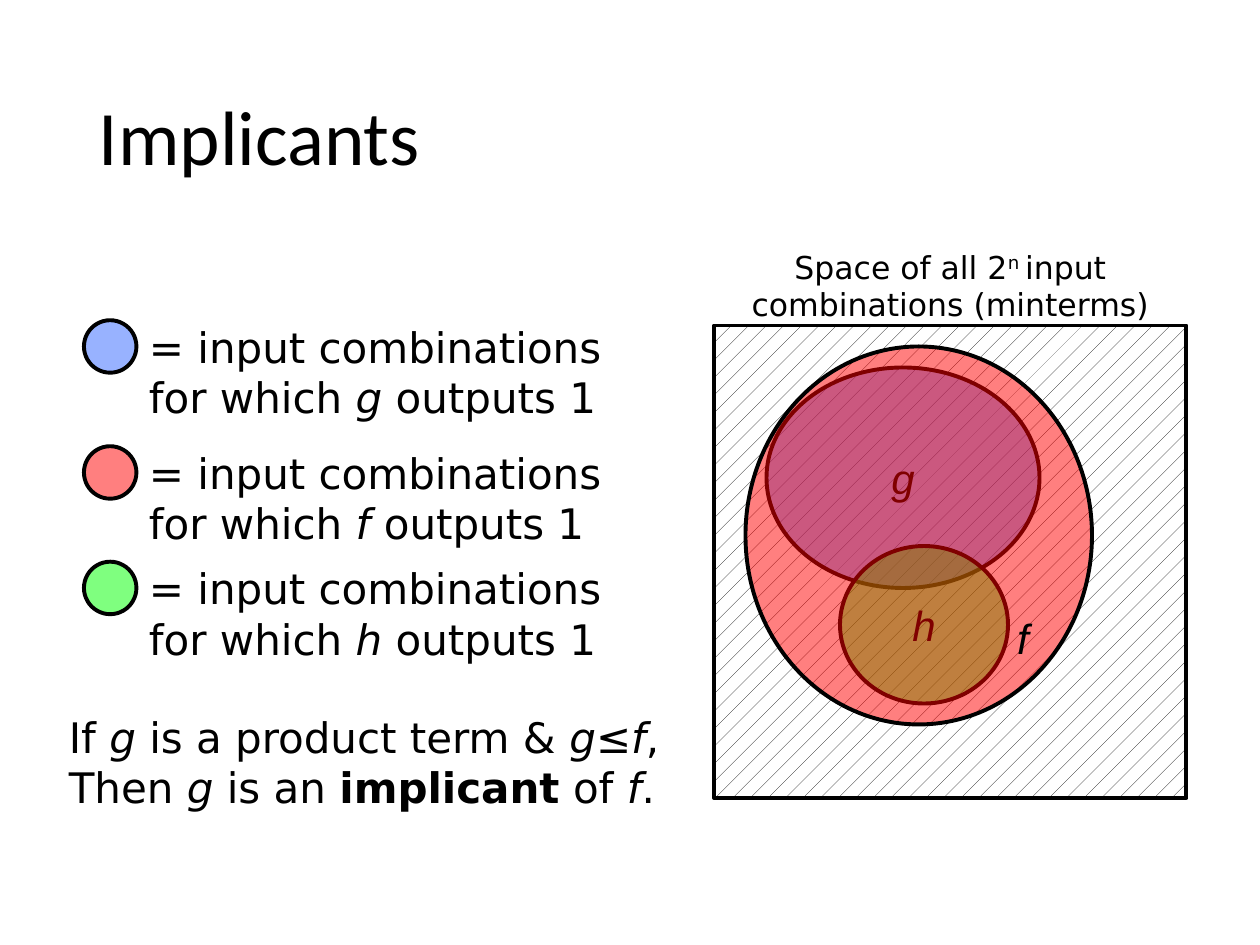
from lxml.etree import SubElement
from pptx import Presentation
from pptx.dml.color import RGBColor
from pptx.enum.dml import MSO_PATTERN as Pattern
from pptx.enum.shapes import MSO_SHAPE as Shape
from pptx.enum.text import MSO_ANCHOR as Anchor, MSO_AUTO_SIZE as Fit, PP_ALIGN as Align
from pptx.oxml.ns import qn
from pptx.util import Pt

PX = 9525  # EMU per px, 96 px to the inch
BLACK, WHITE = "000000", "FFFFFF"
BLUE, RED, GREEN = "3366FF", "FF0000", "00FF00"
SANS = "DejaVu Sans"


def write(frame, lines, size, font, align=Align.LEFT, anchor=Anchor.TOP, wrap=False):
    """Fill a frame; *x* is italic, and a piece led by ! is bold, by ^ raised."""
    frame.word_wrap, frame.vertical_anchor = wrap, anchor
    for i, line in enumerate(lines):
        para = frame.add_paragraph() if i else frame.paragraphs[0]
        para.alignment = align
        for j, piece in enumerate(line.split("*")):
            if not piece:
                continue
            run = para.add_run()
            run.text = piece.lstrip("!^")
            run.font.name, run.font.size = font, Pt(size)
            run.font.color.rgb = RGBColor.from_string(BLACK)
            run.font.bold = piece[0] == "!"
            run.font.italic = j % 2 == 1 and piece[0] not in "!^"
            if piece[0] == "^":
                run.font._element.set("baseline", "30000")


def draw(shapes, kind, box, color=None):
    """Add a black-lined shape, half clear in color or hatched without one."""
    shape = shapes.add_shape(kind, *[n * PX for n in box])
    shape.shadow.inherit = False
    shape.line.color.rgb = RGBColor.from_string(BLACK)
    shape.line.width = Pt(2.25)
    fill = shape.fill
    if color:
        fill.solid()
        fill.fore_color.rgb = RGBColor.from_string(color)
        tint = shape._element.spPr.find(qn("a:solidFill"))[0]
        SubElement(tint, qn("a:alpha"), val="50000")
    else:
        fill.patterned()
        fill.pattern = Pattern.PERCENT_5
        fill.fore_color.rgb = RGBColor.from_string(BLACK)
        fill.back_color.rgb = RGBColor.from_string(WHITE)
    return shape


deck = Presentation()
deck.slide_width, deck.slide_height = 960 * PX, 720 * PX
slide = deck.slides.add_slide(deck.slide_layouts[6])
shapes = slide.shapes

# Title
title = shapes.add_textbox(66 * PX, 38 * PX, 828 * PX, 139 * PX)
write(title.text_frame, ["Implicants"], 44, "Calibri", anchor=Anchor.MIDDLE, wrap=True)
title.text_frame.paragraphs[0].line_spacing = 0.9

# Input space with the sets g, h and f
draw(shapes, Shape.RECTANGLE, (544, 248, 360, 360))
sets = [
    ("g", (584, 280, 208, 168), BLUE, Align.CENTER, Anchor.MIDDLE),
    ("h", (640, 416, 128, 120), GREEN, Align.CENTER, Anchor.MIDDLE),
    ("f", (568, 264, 264, 288), RED, Align.RIGHT, Anchor.BOTTOM),
]
for name, box, color, align, anchor in sets:
    oval = draw(shapes, Shape.OVAL, box, color)
    write(oval.text_frame, [f"*{name}*"], 24, "Arial", align, anchor)

# Legend
for name, top, color in [("g", 240, BLUE), ("f", 336, RED), ("h", 424, GREEN)]:
    group = shapes.add_group_shape().shapes
    draw(group, Shape.OVAL, (64, top + 4, 40, 40), color)
    label = group.add_textbox(104 * PX, top * PX, 364 * PX, 86 * PX)
    lines = ["= input combinations", f"for which *{name}* outputs 1"]
    write(label.text_frame, lines, 24, SANS)
    label.text_frame.auto_size = Fit.SHAPE_TO_FIT_TEXT

# Conclusion and caption of the space
notes = [
    ((43, 537, 472, 86), 24, Align.LEFT,
     ["If *g* is a product term & *g*≤*f*,", "Then *g* is an *!implicant* of *f*."]),
    ((562, 184, 324, 67), 18, Align.CENTER,
     ["Space of all 2*^n *input", "combinations (minterms)"]),
]
for box, size, align, lines in notes:
    note = shapes.add_textbox(*[n * PX for n in box])
    write(note.text_frame, lines, size, SANS, align, wrap=True)
    note.text_frame.auto_size = Fit.SHAPE_TO_FIT_TEXT

deck.save("out.pptx")
